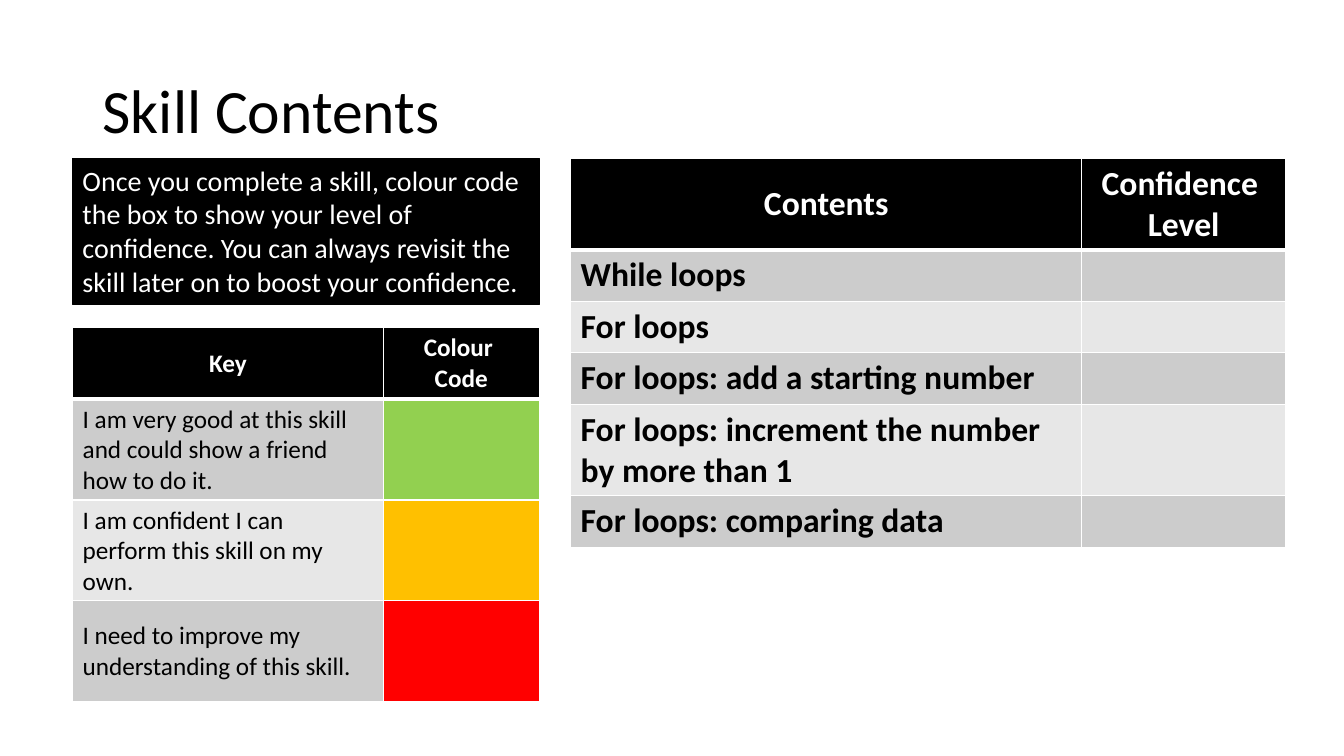
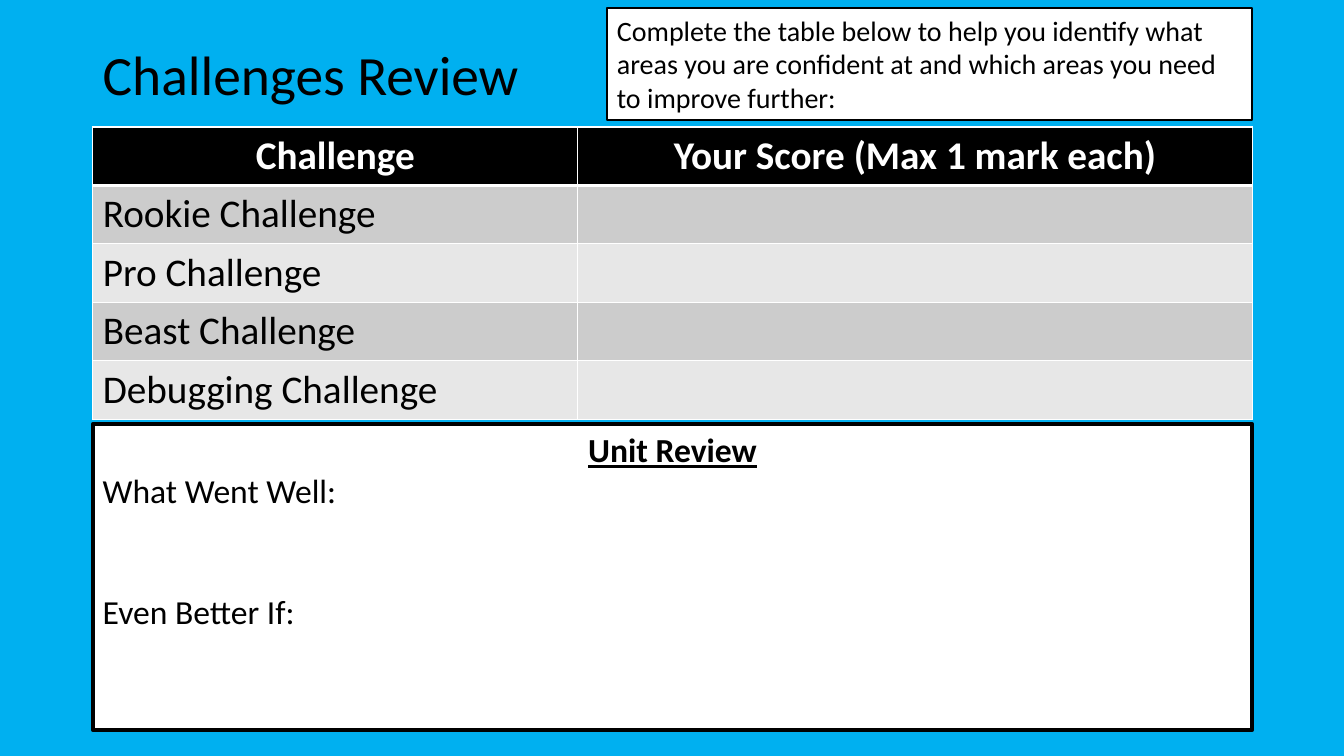
from lxml import etree
from pptx import Presentation
from pptx.dml.color import RGBColor
from pptx.enum.shapes import MSO_SHAPE
from pptx.enum.text import MSO_ANCHOR, PP_ALIGN
from pptx.oxml.ns import qn
from pptx.util import Inches, Pt

RECT = MSO_SHAPE.RECTANGLE
TOP, MIDDLE = MSO_ANCHOR.TOP, MSO_ANCHOR.MIDDLE
LEFT, CENTER = PP_ALIGN.LEFT, PP_ALIGN.CENTER

FONT = "Calibri"
BLACK, WHITE, SKY = "000000", "FFFFFF", "00B0F0"
BANDS = ("CCCCCC", "E7E7E7")

# Content: a row is its label and the fill of its second cell (None = band)
SKILLS = {
    "head": ("Contents", "Confidence \nLevel"),
    "rows": [
        ("While loops", None),
        ("For loops", None),
        ("For loops: add a starting number", None),
        ("For loops: increment the number by more than 1", None),
        ("For loops: comparing data", None),
    ],
    "at": (5.66, 1.57), "cols": (5.07, 2.02),
    "heights": (0.91, 0.51, 0.51, 0.51, 0.91, 0.51),
    "size": 24, "bold": True, "anchor": TOP,
}
KEY = {
    "head": ("Key", "Colour \nCode"),
    "rows": [
        ("I am very good at this skill and could show a friend how to do it.", "92D050"),
        ("I am confident I can perform this skill on my own.", "FFC000"),
        ("I need to improve my understanding of this skill.", "FF0000"),
    ],
    "at": (0.72, 3.25), "cols": (3.08, 1.55),
    "heights": (0.71, 1, 1, 1),
    "size": 18, "bold": False, "anchor": MIDDLE,
}
SCORES = {
    "head": ("Challenge", "Your Score (Max 1 mark each)"),
    "rows": [
        ("Rookie Challenge", None),
        ("Pro Challenge", None),
        ("Beast Challenge", None),
        ("Debugging Challenge", None),
    ],
    "at": (0.92, 1.26), "cols": (4.81, 6.69),
    "heights": (0.58,) * 5,
    "size": 28, "bold": False, "anchor": TOP,
}
SKILL_TIP = ("Once you complete a skill, colour code the box to show your level of "
             "confidence. You can always revisit the skill later on to boost your confidence.")
SCORE_TIP = ("Complete the table below to help you identify what areas you are "
             "confident at and which areas you need to improve further:")
REVIEW = "Unit Review\nWhat Went Well:\nEven Better If:"


def rgb(code):
    return RGBColor.from_string(code)


def paint(part, code):
    part.fill.solid()
    part.fill.fore_color.rgb = rgb(code)


def write(frame, text, size, color, bold=False, align=LEFT):
    frame.text = text
    frame.word_wrap = True
    for para in frame.paragraphs:
        para.alignment = align
        font = para.font
        font.name, font.size, font.bold = FONT, Pt(size), bold
        font.color.rgb = rgb(color)
        for run in para.runs:
            run.font.name, run.font.size, run.font.bold = FONT, Pt(size), bold
            run.font.color.rgb = rgb(color)


def add_page(deck, title, size, height, back):
    page = deck.slides.add_slide(deck.slide_layouts[6])
    page.background.fill.solid()
    page.background.fill.fore_color.rgb = rgb(back)
    box = page.shapes.add_textbox(Inches(0.92), Inches(0.4), Inches(11.5), Inches(height))
    write(box.text_frame, title, size, BLACK)
    box.text_frame.vertical_anchor = MIDDLE
    box.text_frame.paragraphs[0].line_spacing = 0.9
    return page


def add_panel(page, at, text, size, fill, color, line=1):
    panel = page.shapes.add_shape(RECT, *map(Inches, at))
    panel.shadow.inherit = False
    paint(panel, fill)
    panel.line.color.rgb = rgb(BLACK)
    panel.line.width = Pt(line)
    write(panel.text_frame, text, size, color)
    panel.text_frame.vertical_anchor = TOP
    return panel.text_frame


def edge(cell, widths):
    # Border lines come before the fill in the cell properties
    props = cell._tc.get_or_add_tcPr()
    for spot, (side, width) in enumerate(widths.items()):
        line = etree.Element(qn("a:ln" + side), w=str(Pt(width)))
        solid = etree.SubElement(line, qn("a:solidFill"))
        etree.SubElement(solid, qn("a:srgbClr"), val=WHITE)
        props.insert(spot, line)


def add_grid(page, data):
    cols, heights, size = data["cols"], data["heights"], data["size"]
    left, top = data["at"]
    grid = page.shapes.add_table(
        len(heights), len(cols), Inches(left), Inches(top),
        Inches(sum(cols)), Inches(sum(heights))).table
    for col, width in zip(grid.columns, cols):
        col.width = Inches(width)
    for row, height in zip(grid.rows, heights):
        row.height = Inches(height)

    # Header row
    for cell, text in zip(grid.rows[0].cells, data["head"]):
        write(cell.text_frame, text, size, WHITE, True, CENTER)
        cell.vertical_anchor = MIDDLE
        paint(cell, BLACK)
        edge(cell, {"L": 1, "R": 1, "T": 1, "B": 3})

    # Banded rows
    for num, (text, mark) in enumerate(data["rows"]):
        band = BANDS[num % 2]
        cells = grid.rows[num + 1].cells
        for cell, words, fill in zip(cells, (text, ""), (band, mark or band)):
            write(cell.text_frame, words, size, BLACK, data["bold"])
            cell.vertical_anchor = data["anchor"]
            paint(cell, fill)
            edge(cell, {"L": 1, "R": 1, "T": 1 if num else 3, "B": 1})


def main():
    deck = Presentation()
    deck.slide_width, deck.slide_height = Inches(13.33), Inches(7.5)

    # Skill contents
    page = add_page(deck, "Skill Contents", 44, 1.45, WHITE)
    add_grid(page, SKILLS)
    add_panel(page, (0.72, 1.57, 4.63, 1.45), SKILL_TIP, 20, BLACK, WHITE)
    add_grid(page, KEY)

    # Challenges review
    page = add_page(deck, "Challenges Review", 39.6, 0.74, SKY)
    add_grid(page, SCORES)
    frame = add_panel(page, (0.92, 4.21, 11.5, 3.03), REVIEW, 24, WHITE, BLACK, 3)
    head, _, better = frame.paragraphs
    head.alignment = CENTER
    head.runs[0].font.bold = head.runs[0].font.underline = True
    better.space_before = Pt(58)
    add_panel(page, (6.02, 0.08, 6.4, 1.11), SCORE_TIP, 20, WHITE, BLACK)

    deck.save("out.pptx")


if __name__ == "__main__":
    main()
